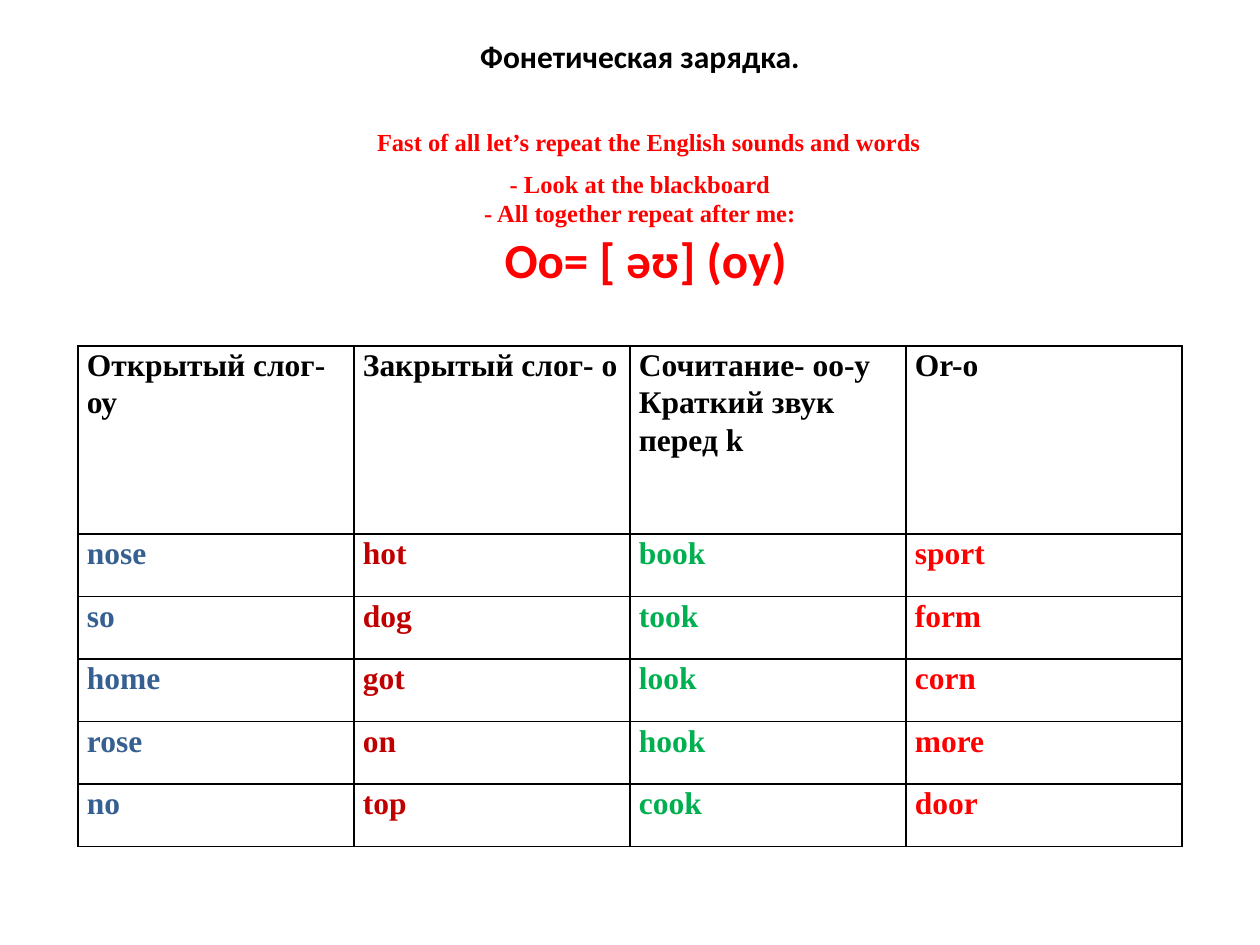
"""Build the phonetic warm-up slide: a centred heading and a table of words by sound."""
from lxml.etree import SubElement
from pptx import Presentation
from pptx.dml.color import RGBColor
from pptx.enum.text import MSO_ANCHOR, PP_ALIGN
from pptx.oxml.ns import qn
from pptx.util import Pt

BLACK = RGBColor(0, 0, 0)
RED = RGBColor(0xFF, 0, 0)
DARK_RED = RGBColor(0xC0, 0, 0)
BLUE = RGBColor(0x37, 0x60, 0x92)
GREEN = RGBColor(0, 0xB0, 0x50)
SANS, SERIF = "Calibri", "Times New Roman"

# text, font, points, colour, points before, indent in px
HEADING = [
    ("Фонетическая зарядка.", SANS, 18, BLACK, 0, 0),
    ("Fast of all let’s repeat the English sounds and words", SERIF, 14, RED, 30, 18),
    ("- Look at the blackboard", SERIF, 14, RED, 7, 0),
    ("- All together repeat after me:", SERIF, 14, RED, 0, 0),
    ("Оо= [ əʊ] (оу)", SANS, 28, RED, 1, 11),
]
SOUNDS = [
    ("Открытый слог- оу", BLUE, ["nose", "so", "home", "rose", "no"]),
    ("Закрытый слог- о", DARK_RED, ["hot", "dog", "got", "on", "top"]),
    ("Сочитание- оо-у\nКраткий звук перед k", GREEN, ["book", "took", "look", "hook", "cook"]),
    ("Or-о", RED, ["sport", "form", "corn", "more", "door"]),
]

PX = 914400 // 126
SLIDE = (1260, 945)
HEADING_BOX = (49, 29, 1182, 886)
TABLE_LEFT, TABLE_TOP, TABLE_BOTTOM = 78, 346, 847
COLUMN_WIDTH, HEADER_HEIGHT = 276, 188
CELL_INSET = 9


def apply(target, values):
    for name, value in values.items():
        setattr(target, name, value)


def format_font(paragraph, family, points, colour):
    for run in paragraph.runs:
        apply(run.font, {"name": family, "size": Pt(points), "bold": True})
        run.font.color.rgb = colour


def add_heading(slide):
    frame = slide.shapes.add_textbox(*(n * PX for n in HEADING_BOX)).text_frame
    apply(frame, {"word_wrap": True, "vertical_anchor": MSO_ANCHOR.TOP, "margin_top": 8 * PX,
                  "margin_left": 0, "margin_right": 0, "margin_bottom": 0})
    for index, (text, family, points, colour, before, indent) in enumerate(HEADING):
        line = frame.add_paragraph() if index else frame.paragraphs[0]
        apply(line, {"text": text, "alignment": PP_ALIGN.CENTER, "space_before": Pt(before)})
        if indent:
            line._p.get_or_add_pPr().set("marL", str(indent * PX))
        format_font(line, family, points, colour)


def add_borders(cell):
    properties = cell._tc.get_or_add_tcPr()
    for index, side in enumerate(("lnL", "lnR", "lnT", "lnB")):
        border = SubElement(properties, qn(f"a:{side}"), w=str(Pt(1)))
        fill = SubElement(border, qn("a:solidFill"))
        SubElement(fill, qn("a:srgbClr"), val=str(BLACK))
        properties.insert(index, border)


def fill_cell(cell, text, colour):
    apply(cell, {"text": text, "vertical_anchor": MSO_ANCHOR.TOP, "margin_top": 0,
                 "margin_bottom": 0, "margin_left": CELL_INSET * PX,
                 "margin_right": CELL_INSET * PX})
    for paragraph in cell.text_frame.paragraphs:
        paragraph.line_spacing = 1.07
        format_font(paragraph, SERIF, 18, colour)
    cell.fill.background()
    add_borders(cell)


def add_sound_table(slide):
    word_count = len(SOUNDS[0][2])
    height = TABLE_BOTTOM - TABLE_TOP
    words_height = (height - HEADER_HEIGHT) * PX // word_count
    table = slide.shapes.add_table(
        word_count + 1, len(SOUNDS), TABLE_LEFT * PX, TABLE_TOP * PX,
        COLUMN_WIDTH * len(SOUNDS) * PX, height * PX).table
    apply(table, {"first_row": False, "horz_banding": False})
    for index, row in enumerate(table.rows):
        row.height = words_height if index else HEADER_HEIGHT * PX
    for column, (sound, colour, words) in enumerate(SOUNDS):
        table.columns[column].width = COLUMN_WIDTH * PX
        fill_cell(table.cell(0, column), sound, BLACK)
        for row, word in enumerate(words, 1):
            fill_cell(table.cell(row, column), word, colour)


def main():
    deck = Presentation()
    apply(deck, {"slide_width": SLIDE[0] * PX, "slide_height": SLIDE[1] * PX})
    slide = deck.slides.add_slide(deck.slide_layouts[6])
    add_heading(slide)
    add_sound_table(slide)
    deck.save("out.pptx")


if __name__ == "__main__":
    main()
